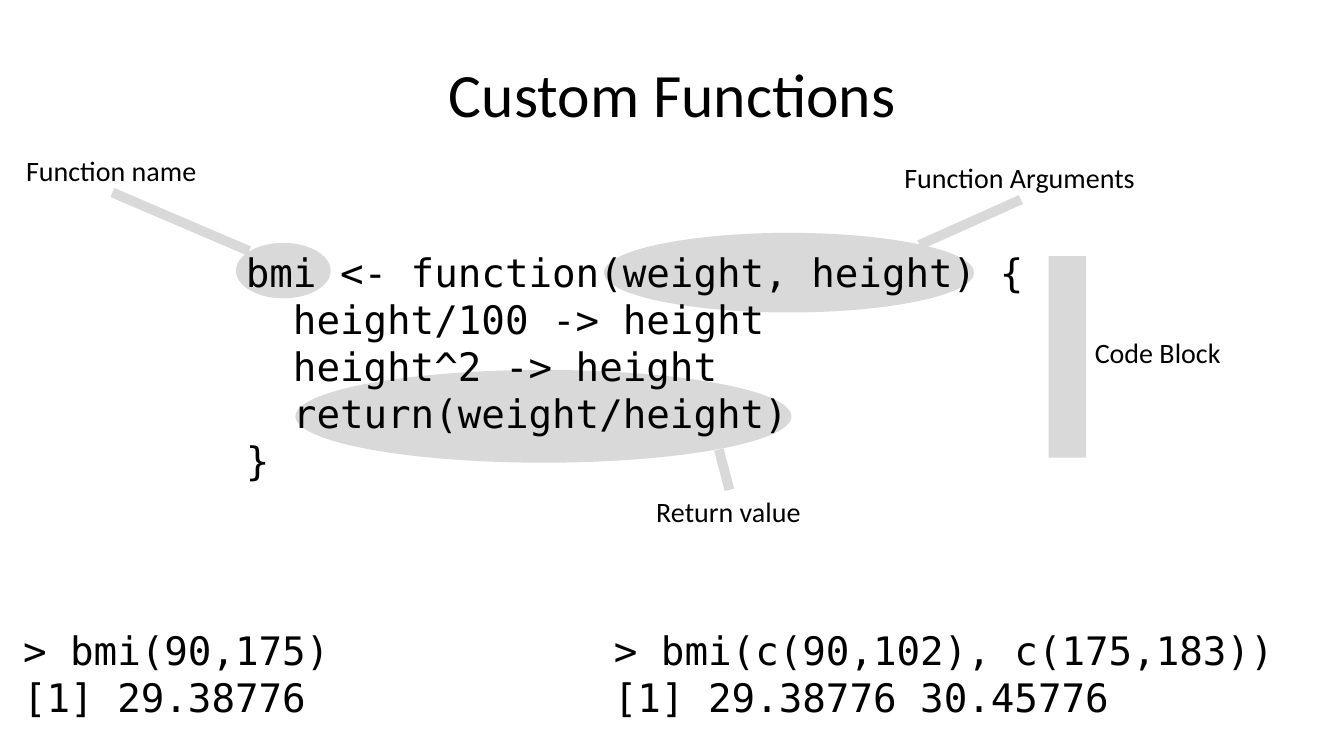
"""Build the slide that explains the parts of a custom function."""
from pptx import Presentation
from pptx.dml.color import RGBColor
from pptx.enum.shapes import MSO_CONNECTOR, MSO_SHAPE
from pptx.enum.text import MSO_ANCHOR, MSO_AUTO_SIZE, PP_ALIGN
from pptx.oxml.ns import qn
from pptx.util import Inches, Pt
from lxml import etree

BLACK = RGBColor(0x00, 0x00, 0x00)
GREY = RGBColor(0xD9, 0xD9, 0xD9)
SANS = "Calibri"
MONO = "DejaVu Sans Mono"
STRAIGHT = MSO_CONNECTOR.STRAIGHT
OVAL = MSO_SHAPE.OVAL
RECTANGLE = MSO_SHAPE.RECTANGLE
FIT = MSO_AUTO_SIZE.SHAPE_TO_FIT_TEXT
NO_FIT = MSO_AUTO_SIZE.NONE
TOP, MIDDLE = MSO_ANCHOR.TOP, MSO_ANCHOR.MIDDLE
LEFT, CENTER = PP_ALIGN.LEFT, PP_ALIGN.CENTER


def write(sp, text, size=20, font=SANS, wrap=False, fit=FIT, anchor=TOP, align=LEFT):
    tf = sp.text_frame
    tf.word_wrap = wrap
    tf.auto_size = fit
    tf.vertical_anchor = anchor
    tf.text = text
    for p in tf.paragraphs:
        p.alignment = align
        for r in p.runs:
            r.font.size = Pt(size)
            r.font.name = font
            r.font.color.rgb = BLACK


def add_highlight(kind, box):
    sp = s.shapes.add_shape(kind, *map(Inches, box))
    sp.shadow.inherit = False
    sp.fill.solid()
    sp.fill.fore_color.rgb = GREY
    sp.line.fill.background()


prs = Presentation()
prs.slide_width, prs.slide_height = Inches(13.33), Inches(7.5)
s = prs.slides.add_slide(prs.slide_layouts[5])

title = s.shapes.title
title.left, title.top = Inches(0.67), Inches(0.3)
title.width, title.height = Inches(12), Inches(1.25)
write(title, "Custom Functions", size=44, wrap=True, fit=NO_FIT,
      anchor=MIDDLE, align=CENTER)

# label, label box, highlight shape, highlight box, pointer start, label side
callouts = [
    ("Return value", (6.41, 4.86, 1.65, 0.44),
     OVAL, (2.93, 3.67, 4.92, 0.92), (7.13, 4.46), 0),
    ("Function Arguments", (8.87, 1.54, 2.51, 0.44),
     OVAL, (5.99, 2.31, 3.67, 0.79), (9.12, 2.43), 2),
    ("Function name", (0.16, 1.47, 1.91, 0.44),
     OVAL, (2.34, 2.41, 0.94, 0.55), (2.47, 2.49), 2),
    ("Code Block", (10.76, 3.28, 1.46, 0.44),
     RECTANGLE, (10.4, 2.54, 0.37, 2), None, None),
]
for text, label_box, kind, highlight_box, start, side in callouts:
    label = s.shapes.add_textbox(*map(Inches, label_box))
    write(label, text)
    add_highlight(kind, highlight_box)
    if start:
        x, y = map(Inches, start)
        pointer = s.shapes.add_connector(STRAIGHT, x, y, x, y)
        pointer.end_connect(label, side)
        pointer.line.color.rgb = GREY
        pointer.line.width = Pt(7)
        etree.SubElement(pointer._element.spPr, qn("a:effectLst"))

code_blocks = [
    ((2.34, 2.41, 8.66, 2.46),
     "bmi <- function(weight, height) {\n"
     "  height/100 -> height\n"
     "  height^2 -> height\n"
     "  return(weight/height)\n"
     "}"),
    ((0.13, 6.16, 4.02, 1.04), "> bmi(90,175)\n[1] 29.38776"),
    ((5.99, 6.16, 7.22, 1.04),
     "> bmi(c(90,102), c(175,183))\n[1] 29.38776 30.45776"),
]
for box, code in code_blocks:
    write(s.shapes.add_textbox(*map(Inches, box)), code,
          size=28, font=MONO, wrap=True)

prs.save("out.pptx")
